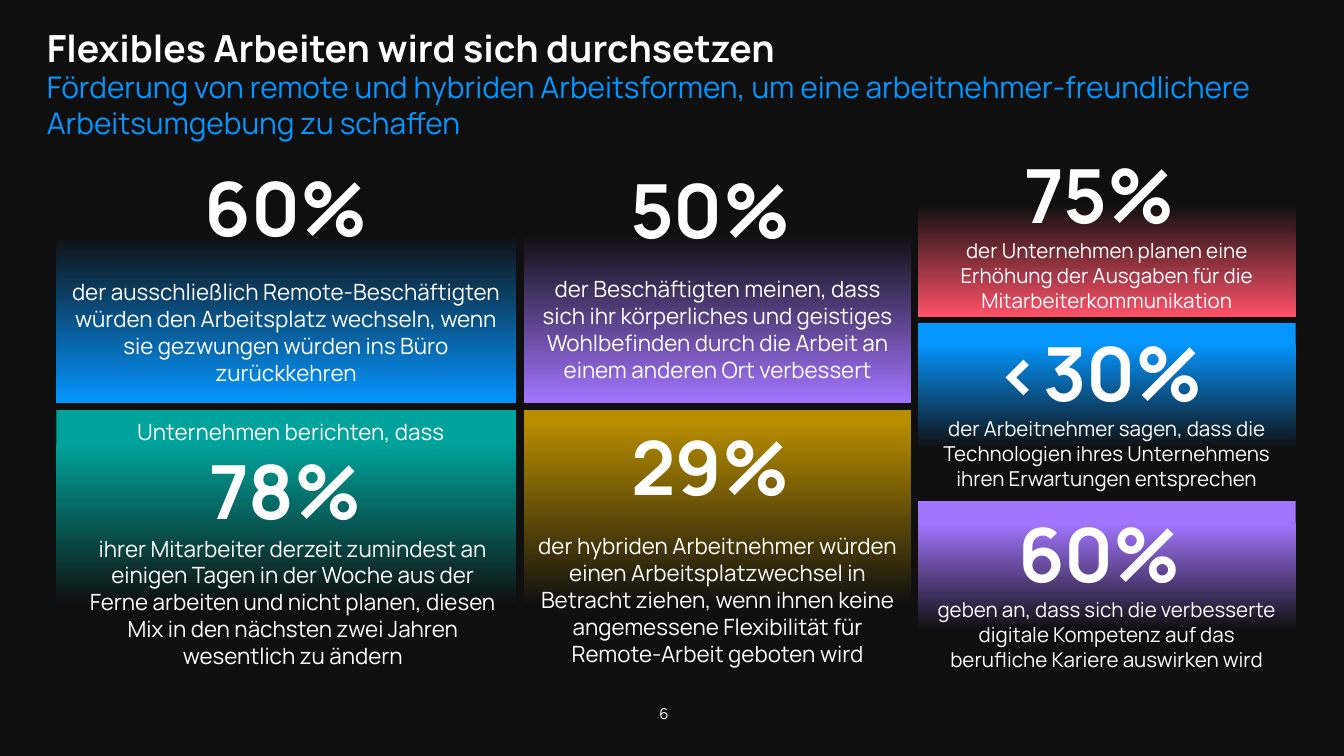
import pptx
import pptx.dml.color
import pptx.enum.shapes
import pptx.enum.text
import pptx.util

Pt = pptx.util.Pt
CENTER = pptx.enum.text.PP_ALIGN.CENTER
MIDDLE = pptx.enum.text.MSO_ANCHOR.MIDDLE
BACKGROUND = "0F0F0F"


def color(value):
    return pptx.dml.color.RGBColor.from_string(value)


def write(paragraph, text, size=12, fill="FFFFFF", bold=False, align=CENTER, before=0, line=None):
    paragraph.alignment = align
    if before:
        paragraph.space_before = Pt(before)
    if line:
        paragraph.line_spacing = Pt(line)
    run = paragraph.add_run()
    run.text = text
    run.font.name = "Manrope"
    run.font.size = Pt(size)
    run.font.bold = bold
    run.font.color.rgb = color(fill)


presentation = pptx.Presentation()
presentation.slide_width = Pt(720)
presentation.slide_height = Pt(405)
slide = presentation.slides.add_slide(presentation.slide_layouts[6])
slide.background.fill.solid()
slide.background.fill.fore_color.rgb = color(BACKGROUND)

left_align = pptx.enum.text.PP_ALIGN.LEFT
labels = [
    ((18, 10.1, 675.4, 57.6), "Flexibles Arbeiten wird sich durchsetzen",
     dict(size=20, bold=True, align=left_align)),
    ((18, 33.1, 675.4, 34.6),
     "Förderung von remote und hybriden Arbeitsformen, um eine "
     "arbeitnehmer-freundlichere Arbeitsumgebung zu schaffen",
     dict(size=16, fill="0596FF", align=left_align)),
    ((338.4, 373.7, 34.6, 17.3), "6", dict(size=8)),
]
for bounds, text, style in labels:
    box = slide.shapes.add_textbox(*[Pt(length) for length in bounds])
    box.text_frame.word_wrap = True
    if text == "6":
        box.text_frame.vertical_anchor = MIDDLE
    write(box.text_frame.paragraphs[0], text, **style)

figure = dict(size=40, bold=True)
small = dict(size=11)
rising, falling = (35, 100), (12, 73)
left_column, middle_column, right_column = (30.2, 246.2), (280.8, 207.4), (491.8, 202.3)
upper_row, lower_row = (77, 139), (219.6, 143.3)

cards = [
    (left_column, upper_row, "0596FF", rising, dict(margin_top=27.6), [
        ("60%", dict(figure, line=24)),
        ("der ausschließlich Remote-Beschäftigten würden den Arbeitsplatz wechseln, "
         "wenn sie gezwungen würden ins Büro zurückkehren", dict(before=14.5))]),
    (left_column, lower_row, "00A39B", falling, dict(margin_left=14.4), [
        ("Unternehmen berichten, dass ", {}),
        ("78% ", figure),
        ("ihrer Mitarbeiter derzeit zumindest an einigen Tagen in der Woche aus der Ferne "
         "arbeiten und nicht planen, diesen Mix in den nächsten zwei Jahren wesentlich "
         "zu ändern", {})]),
    (middle_column, upper_row, "A375FF", rising, {}, [
        ("50% ", figure),
        ("der Beschäftigten meinen, dass sich ihr körperliches und geistiges Wohlbefinden "
         "durch die Arbeit an einem anderen Ort verbessert", dict(before=12))]),
    (middle_column, lower_row, "B88D00", (4, 73), {}, [
        ("29% ", figure),
        ("der hybriden Arbeitnehmer würden einen Arbeitsplatzwechsel in Betracht ziehen, "
         "wenn ihnen keine angemessene Flexibilität für Remote-Arbeit geboten wird",
         dict(before=12))]),
    (right_column, (77, 92.9), "FF5269", rising, {}, [
        ("75% ", figure),
        ("der Unternehmen planen eine Erhöhung der Ausgaben für die "
         "Mitarbeiterkommunikation", small)]),
    (right_column, (172.8, 92.2), "0596FF", falling, {}, [
        ("<30% ", figure),
        ("der Arbeitnehmer sagen, dass die Technologien ihres Unternehmens ihren "
         "Erwartungen entsprechen", small)]),
    (right_column, (268.6, 94.3), "A375FF", falling, {}, [
        ("60% ", figure),
        ("geben an, dass sich die verbesserte digitale Kompetenz auf das berufliche "
         "Kariere auswirken wird", small)]),
]
for (left, width), (top, height), accent, positions, margins, texts in cards:
    card = slide.shapes.add_shape(
        pptx.enum.shapes.MSO_SHAPE.RECTANGLE, Pt(left), Pt(top), Pt(width), Pt(height))
    card.shadow.inherit = False
    card.line.fill.background()
    card.fill.gradient()
    card.fill.gradient_angle = 270
    stop_colors = (BACKGROUND, accent) if positions == rising else (accent, BACKGROUND)
    for stop, position, value in zip(card.fill.gradient_stops, positions, stop_colors):
        stop.position = position / 100
        stop.color.rgb = color(value)
    frame = card.text_frame
    frame.word_wrap = True
    frame.vertical_anchor = MIDDLE
    for side, length in margins.items():
        setattr(frame, side, Pt(length))
    for index, (text, style) in enumerate(texts):
        paragraph = frame.add_paragraph() if index else frame.paragraphs[0]
        write(paragraph, text, **style)

presentation.save("out.pptx")
